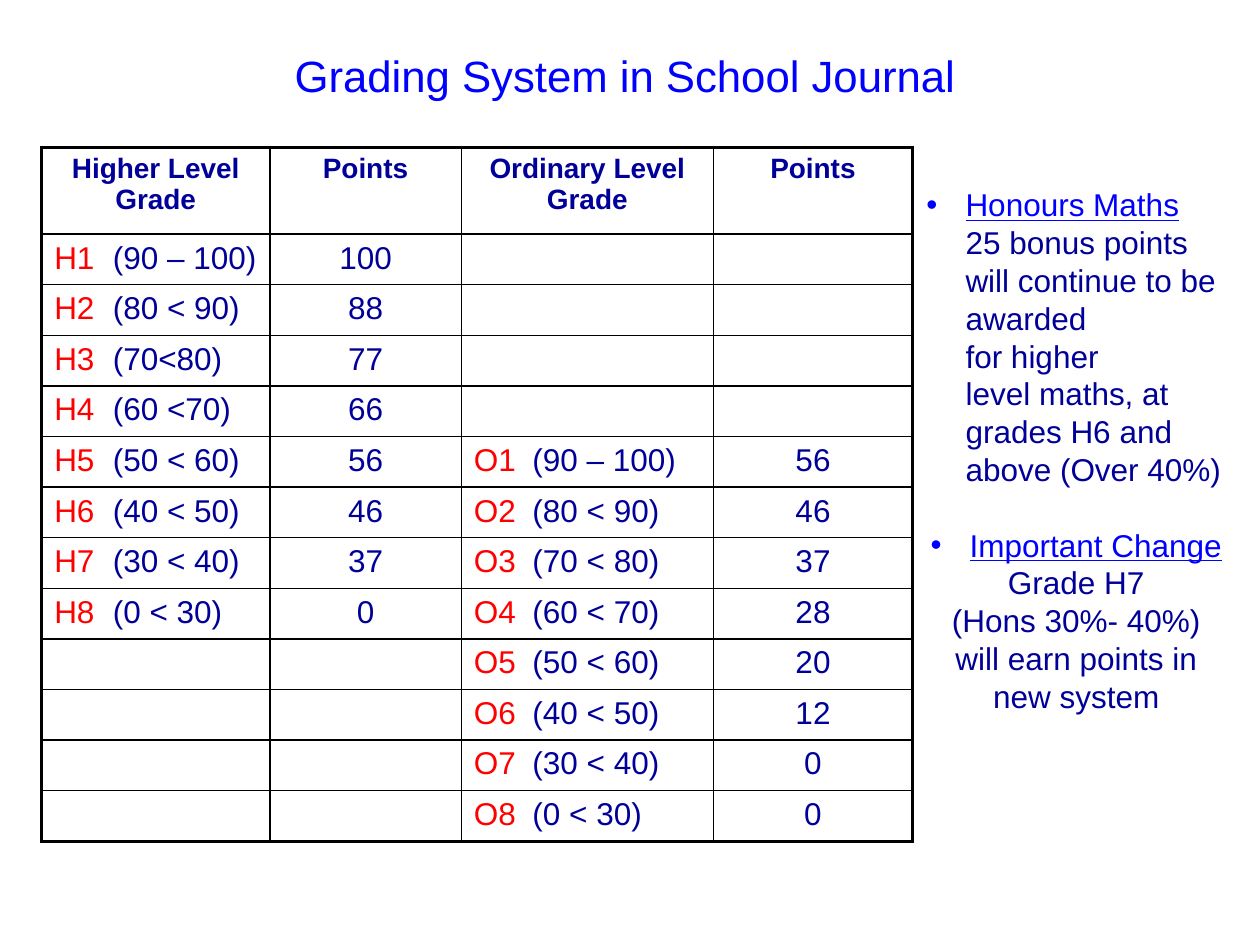
import pptx
import pptx.dml.color
import pptx.enum.text
import pptx.util
from dataclasses import dataclass
from lxml import etree
from pptx.oxml.ns import qn

Cm = pptx.util.Cm
Pt = pptx.util.Pt
ALIGN = pptx.enum.text.PP_ALIGN


@dataclass(frozen=True)
class Theme:
    face: str = "Arial"
    heading: str = "0000FF"
    text: str = "000099"
    grade: str = "FF0000"
    border: str = "000000"
    title_size: float = 25
    header_size: float = 16
    body_size: float = 18
    body_line: float = 21.6
    outer_border: float = 2.25
    inner_border: float = 1


theme = Theme()


def style_font(font, size, color, bold=False, underline=False):
    font.name = theme.face
    font.size = Pt(size)
    font.bold = bold
    font.underline = underline
    font.color.rgb = pptx.dml.color.RGBColor.from_string(color)


def draw_border(cell, position, side, width):
    line = etree.Element(qn(f"a:ln{side}"), w=str(Pt(width)))
    fill = etree.SubElement(line, qn("a:solidFill"))
    etree.SubElement(fill, qn("a:srgbClr"), val=theme.border)
    cell._tc.get_or_add_tcPr().insert(position, line)


deck = pptx.Presentation()
deck.slide_width = Cm(25.4)
deck.slide_height = Cm(19.05)
page = deck.slides.add_slide(deck.slide_layouts[1])

title = page.shapes.title
title.left, title.top, title.width, title.height = Cm(0.43), Cm(0.84), Cm(24.33), Cm(1.35)
title.text_frame.text = "Grading System in School Journal"
title.text_frame.vertical_anchor = pptx.enum.text.MSO_ANCHOR.MIDDLE
title.text_frame.paragraphs[0].alignment = ALIGN.CENTER
style_font(title.text_frame.paragraphs[0].font, theme.title_size, theme.heading)

headers = ["Higher Level Grade", "Points", "Ordinary Level Grade", "Points"]
higher = [
    ("H1", "(90 – 100)", "100"),
    ("H2", "(80 < 90)", "88"),
    ("H3", "(70<80)", "77"),
    ("H4", "(60 <70)", "66"),
    ("H5", "(50 < 60)", "56"),
    ("H6", "(40 < 50)", "46"),
    ("H7", "(30 < 40)", "37"),
    ("H8", "(0 < 30)", "0"),
]
ordinary = [
    ("O1", "(90 – 100)", "56"),
    ("O2", "(80 < 90)", "46"),
    ("O3", "(70 < 80)", "37"),
    ("O4", "(60 < 70)", "28"),
    ("O5", "(50 < 60)", "20"),
    ("O6", "(40 < 50)", "12"),
    ("O7", "(30 < 40)", "0"),
    ("O8", "(0 < 30)", "0"),
]
column_widths = [4.6, 3.86, 5.08, 4.02]
row_heights = [1.75] + [1.02] * 12
row_count, column_count = len(row_heights), len(column_widths)

table = page.shapes.add_table(
    row_count, column_count, Cm(0.84), Cm(2.97), Cm(sum(column_widths)), Cm(sum(row_heights))
).table
table.first_row = False
table.horz_banding = False
for column, width in zip(table.columns, column_widths):
    column.width = Cm(width)
for row, height in zip(table.rows, row_heights):
    row.height = Cm(height)

for row_index in range(row_count):
    for column_index in range(column_count):
        cell = table.cell(row_index, column_index)
        cell.fill.background()
        edges = {
            "L": column_index == 0,
            "R": column_index == column_count - 1,
            "T": row_index == 0,
            "B": row_index == row_count - 1,
        }
        for position, (side, outer) in enumerate(edges.items()):
            draw_border(cell, position, side, theme.outer_border if outer else theme.inner_border)
        style_font(cell.text_frame.paragraphs[0].font, theme.body_size, theme.text)

for column_index, header in enumerate(headers):
    para = table.cell(0, column_index).text_frame.paragraphs[0]
    para.text = header
    para.alignment = ALIGN.CENTER
    style_font(para.font, theme.header_size, theme.text, bold=True)

for first_row, first_column, grades in [(1, 0, higher), (5, 2, ordinary)]:
    for row_index, (grade, marks, points) in enumerate(grades, first_row):
        para = table.cell(row_index, first_column).text_frame.paragraphs[0]
        properties = para._p.get_or_add_pPr()
        tabs = etree.Element(qn("a:tabLst"))
        etree.SubElement(tabs, qn("a:tab"), pos=str(Cm(1.18)), algn="l")
        properties.insert(0, tabs)
        for text, color in [(grade, theme.grade), ("\t" + marks, theme.text)]:
            span = para.add_run()
            span.text = text
            style_font(span.font, theme.body_size, color)
        para = table.cell(row_index, first_column + 1).text_frame.paragraphs[0]
        para.text = points
        para.alignment = ALIGN.CENTER

sections = [
    ("Honours Maths", ALIGN.LEFT, 0.79, [
        "25 bonus points",
        "will continue to be",
        "awarded",
        "for higher",
        "level maths, at",
        "grades H6 and",
        "above (Over 40%)",
    ]),
    ("Important Change", ALIGN.CENTER, 0, [
        "Grade H7",
        "(Hons 30%- 40%) will earn points in new system",
    ]),
]
notes = page.placeholders[1]
notes.left, notes.top, notes.width, notes.height = Cm(18.42), Cm(3.61), Cm(6.55), Cm(11.79)
frame = notes.text_frame
frame.word_wrap = True
frame.auto_size = pptx.enum.text.MSO_AUTO_SIZE.NONE
for section_index, (heading, alignment, indent, lines) in enumerate(sections):
    for line_index, text in enumerate([heading] + lines):
        is_heading = line_index == 0
        is_first = is_heading and section_index == 0
        para = frame.paragraphs[0] if is_first else frame.add_paragraph()
        para.text = text
        properties = para._p.get_or_add_pPr()
        properties.set("marL", str(Cm(0.79 if is_heading else indent)))
        properties.set("indent", str(Cm(-0.79 if is_heading else 0)))
        if is_heading:
            etree.SubElement(properties, qn("a:buChar"), char="•")
        else:
            etree.SubElement(properties, qn("a:buNone"))
        para.alignment = alignment
        para.line_spacing = Pt(theme.body_line)
        para.space_before = Pt(theme.body_line if is_heading and not is_first else 0)
        color = theme.heading if is_heading else theme.text
        style_font(para.font, theme.body_size, color, underline=is_heading)

deck.save("out.pptx")
